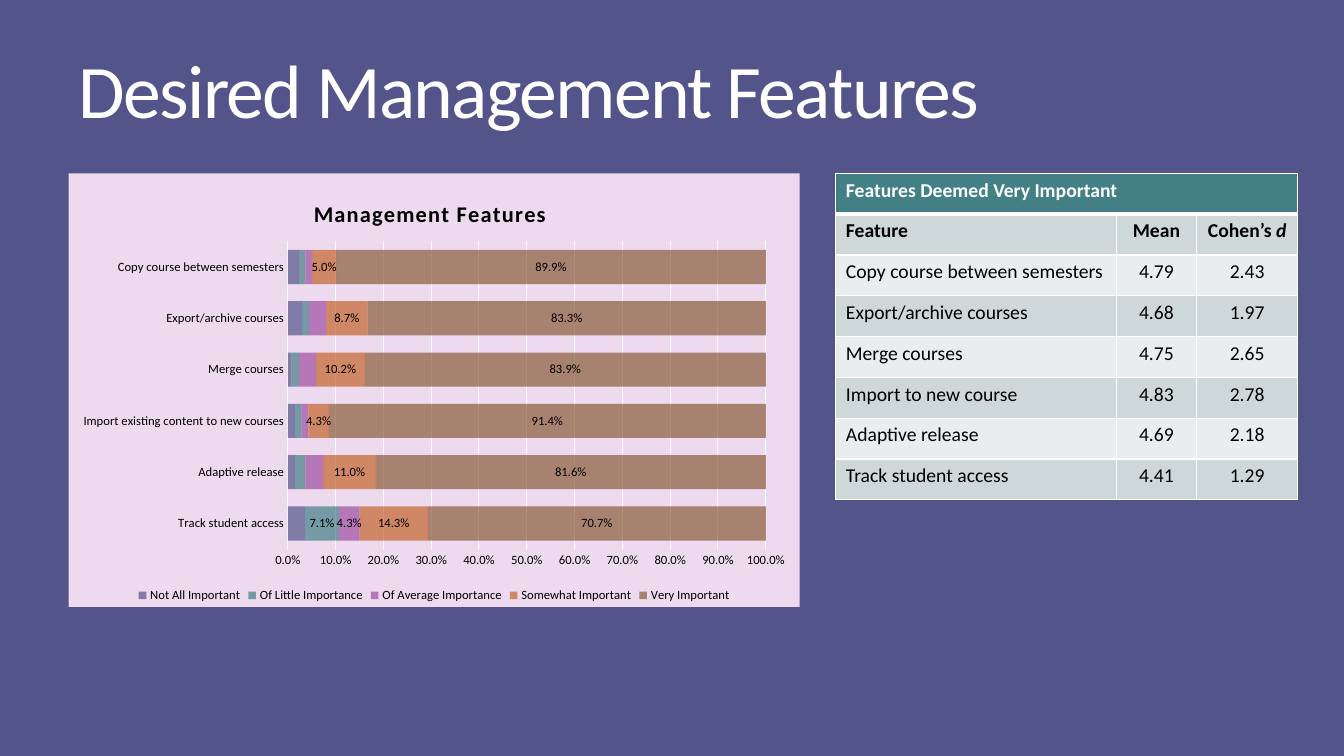
from lxml.etree import SubElement
from pptx import Presentation
from pptx.chart.data import CategoryChartData
from pptx.dml.color import RGBColor
from pptx.enum.chart import XL_CHART_TYPE, XL_LABEL_POSITION, XL_LEGEND_POSITION, XL_TICK_MARK
from pptx.enum.text import MSO_ANCHOR, PP_ALIGN
from pptx.oxml import parse_xml
from pptx.oxml.ns import nsdecls, qn
from pptx.util import Inches, Pt

FEATURES = ["Track student access", "Adaptive release", "Import existing content to new courses",
            "Merge courses", "Export/archive courses", "Copy course between semesters"]
RATINGS = [
    ("Not All Important", "53548A", [0.036, 0.015, 0.015, 0.008, 0.03, 0.023], []),
    ("Of Little Importance", "438086", [0.071, 0.022, 0.014, 0.015, 0.014, 0.014], [0]),
    ("Of Average Importance", "A04DA3", [0.043, 0.037, 0.014, 0.036, 0.036, 0.014], [0]),
    ("Somewhat Important", "C4652D", [0.143, 0.11, 0.043, 0.102, 0.087, 0.05], range(6)),
    ("Very Important", "8B5D3D", [0.707, 0.816, 0.914, 0.839, 0.833, 0.899], range(6)),
]
IMPORTANT = [
    ("Features Deemed Very Important", "", ""),
    ("Feature", "Mean", "Cohen’s "),
    ("Copy course between semesters", "4.79", "2.43"),
    ("Export/archive courses", "4.68", "1.97"),
    ("Merge courses", "4.75", "2.65"),
    ("Import to new course", "4.83", "2.78"),
    ("Adaptive release", "4.69", "2.18"),
    ("Track student access", "4.41", "1.29"),
]


def rgb(code):
    return RGBColor.from_string(code)


def place(parent, **fractions):
    layout = parent.find(qn("c:layout"))
    if layout is None:
        layout = parse_xml(f"<c:layout {nsdecls('c')}/>")
        parent.insert(0, layout)
    manual = SubElement(layout, qn("c:manualLayout"))
    for tag, value in fractions.items():
        SubElement(manual, qn(f"c:{tag}")).set("val", str(value))


class SlideBuilder:
    font_name = "Calibri"
    white = "FFFFFF"
    black = "000000"

    def __init__(self, presentation, background):
        self.slide = presentation.slides.add_slide(presentation.slide_layouts[5])
        self.slide.background.fill.solid()
        self.slide.background.fill.fore_color.rgb = rgb(background)

    def style(self, font, size, color, bold=False):
        font.name = self.font_name
        font.size = Pt(size)
        font.bold = bold
        font.color.rgb = rgb(color)

    def rule(self, line):
        line.color.rgb = rgb(self.white)
        line.width = Pt(0.75)

    def title(self, words, left, top, width, height):
        heading = self.slide.shapes.title
        heading.left, heading.top = Inches(left), Inches(top)
        heading.width, heading.height = Inches(width), Inches(height)
        frame = heading.text_frame
        frame.text = words
        frame.word_wrap = True
        frame.vertical_anchor = MSO_ANCHOR.MIDDLE
        paragraph = frame.paragraphs[0]
        paragraph.alignment = PP_ALIGN.LEFT
        paragraph.line_spacing = 0.85
        self.style(paragraph.runs[0].font, 54, self.white)
        paragraph.runs[0]._r.get_or_add_rPr().set("spc", "-120")

    def ratings_chart(self, words, left, top, width, height):
        data = CategoryChartData(number_format="0.0%")
        data.categories = FEATURES
        for name, _, shares, _ in RATINGS:
            data.add_series(name, shares)
        chart = self.slide.shapes.add_chart(
            XL_CHART_TYPE.BAR_STACKED, Inches(left), Inches(top),
            Inches(width), Inches(height), data).chart
        self.style(chart.font, 10, self.black)
        area = parse_xml(f'<c:spPr {nsdecls("c", "a")}><a:solidFill><a:srgbClr val="EDDAEE"/>'
                         '</a:solidFill><a:ln><a:noFill/></a:ln></c:spPr>')
        chart._chartSpace.chart.addnext(area)

        chart.has_title = True
        chart.chart_title.text_frame.text = words
        heading = chart.chart_title.text_frame.paragraphs[0].runs[0]
        self.style(heading.font, 16, self.black, True)
        heading._r.get_or_add_rPr().set("spc", "100")
        place(chart.chart_title._element, xMode="edge", yMode="edge", x=0.33, y=0.05)
        place(chart._chartSpace.chart.plotArea, layoutTarget="inner", xMode="edge",
              yMode="edge", x=0.3, y=0.157, w=0.654, h=0.71)

        chart.has_legend = True
        chart.legend.position = XL_LEGEND_POSITION.BOTTOM
        chart.legend.include_in_layout = False
        self.style(chart.legend.font, 9, self.black)

        for axis in (chart.category_axis, chart.value_axis):
            axis.major_tick_mark = axis.minor_tick_mark = XL_TICK_MARK.NONE
            self.style(axis.tick_labels.font, 9, self.black)
        self.rule(chart.category_axis.format.line)
        shares = chart.value_axis
        shares.minimum_scale, shares.maximum_scale, shares.major_unit = 0, 1, 0.1
        shares.format.line.fill.background()
        self.rule(shares.major_gridlines.format.line)
        shares.tick_labels.number_format = "0.0%"
        shares.tick_labels.number_format_is_linked = False

        plot = chart.plots[0]
        plot.gap_width, plot.overlap, plot.vary_by_categories = 50, 100, False
        for series, (_, color, _, labelled) in zip(plot.series, RATINGS):
            series.format.fill.solid()
            series.format.fill.fore_color.rgb = rgb(color)
            tint = series._element.spPr.find(f".//{qn('a:srgbClr')}")
            SubElement(tint, qn("a:alpha")).set("val", "70000")
            if labelled:
                self.share_labels(series.data_labels, labelled)

    def share_labels(self, labels, labelled):
        labels.show_value = True
        labels.position = XL_LABEL_POSITION.CENTER
        labels.number_format = "0.0%"
        labels.number_format_is_linked = False
        self.style(labels.font, 9, self.black)
        hidden = [index for index in range(len(FEATURES)) if index not in labelled]
        for position, index in enumerate(hidden):
            labels._element.insert(position, parse_xml(
                f'<c:dLbl {nsdecls("c")}><c:idx val="{index}"/><c:delete val="1"/></c:dLbl>'))

    def borders(self, cell, row):
        widths = {"L": 1, "R": 1, "T": 3 if row == 1 else 1, "B": 3 if row == 0 else 1}
        properties = cell._tc.get_or_add_tcPr()
        for position, (side, width) in enumerate(widths.items()):
            properties.insert(position, parse_xml(
                f'<a:ln{side} {nsdecls("a")} w="{Pt(width)}"><a:solidFill>'
                f'<a:srgbClr val="{self.white}"/></a:solidFill></a:ln{side}>'))

    def importance_table(self, left, top, column_widths, row_height):
        table = self.slide.shapes.add_table(
            len(IMPORTANT), len(column_widths), Inches(left), Inches(top),
            Inches(sum(column_widths)), Inches(row_height * len(IMPORTANT))).table
        for column, width in zip(table.columns, column_widths):
            column.width = Inches(width)
        for row, entries in enumerate(IMPORTANT):
            table.rows[row].height = Inches(row_height)
            fill = "438086" if row == 0 else ("E9EDED", "CFD8D9")[row % 2]
            for column, words in enumerate(entries):
                cell = table.cell(row, column)
                cell.fill.solid()
                cell.fill.fore_color.rgb = rgb(fill)
                self.borders(cell, row)
                cell.text_frame.text = words
                paragraph = cell.text_frame.paragraphs[0]
                paragraph.alignment = PP_ALIGN.CENTER if column else PP_ALIGN.LEFT
                if words == "Cohen’s ":
                    statistic = paragraph.add_run()
                    statistic.text = "d"
                    statistic.font.italic = True
                for run in paragraph.runs:
                    self.style(run.font, 14, self.black if row else self.white, row < 2)
        table.cell(0, 0).merge(table.cell(0, len(column_widths) - 1))


def main():
    presentation = Presentation()
    presentation.slide_width = Inches(13.33)
    presentation.slide_height = Inches(7.5)
    builder = SlideBuilder(presentation, "53548A")
    builder.title("Desired Management Features", 0.68, 0.37, 11.78, 1.16)
    builder.ratings_chart("Management Features", 0.68, 1.72, 7.25, 4.3)
    builder.importance_table(8.29, 1.72, [2.78, 0.8, 1], 0.405)
    presentation.save("out.pptx")


if __name__ == "__main__":
    main()
